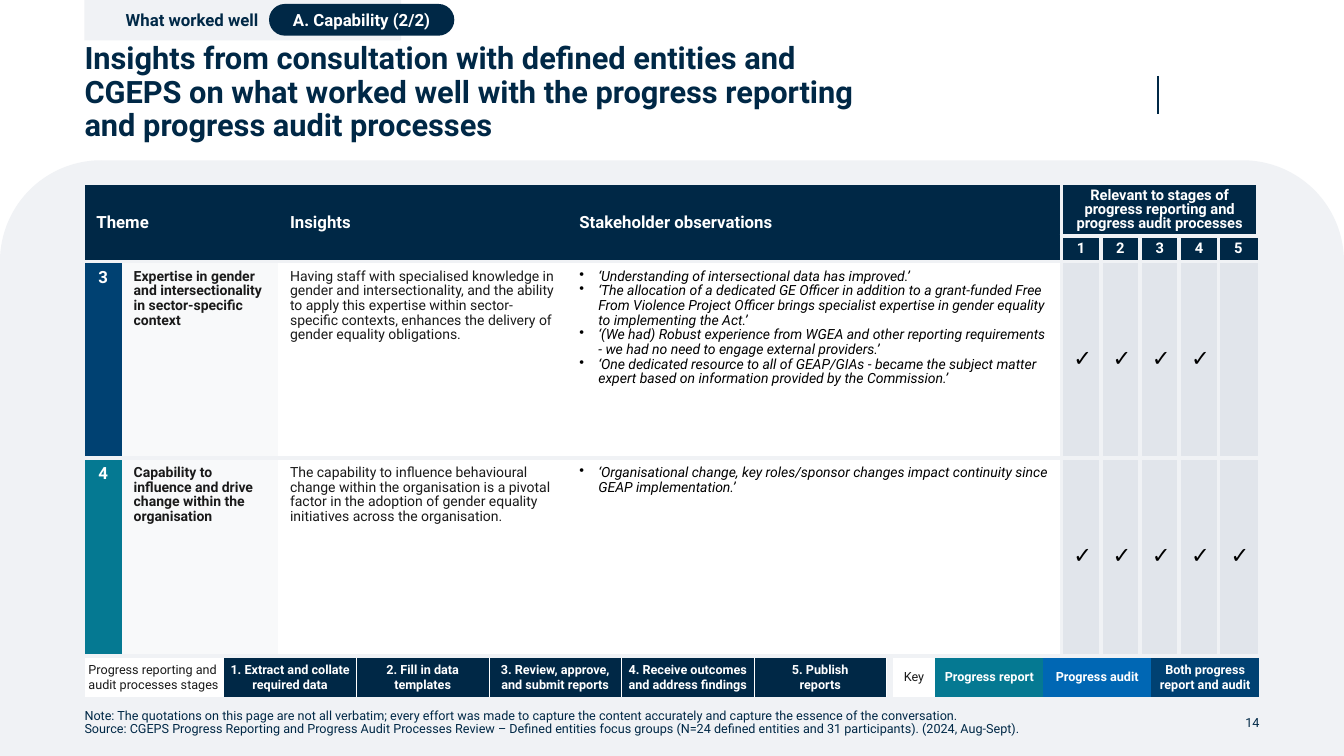
import pptx
import pptx.util
import pptx.dml.color
import pptx.enum.shapes
import pptx.enum.text
import pptx.oxml.ns
from lxml import etree

Cm, Pt = pptx.util.Cm, pptx.util.Pt
RGBColor = pptx.dml.color.RGBColor
Align = pptx.enum.text.PP_ALIGN
Anchor = pptx.enum.text.MSO_ANCHOR
Shape = pptx.enum.shapes.MSO_SHAPE
qn = pptx.oxml.ns.qn

NAVY = RGBColor(0x00, 0x28, 0x46)
DEEP_BLUE = RGBColor(0x00, 0x41, 0x72)
BLUE = RGBColor(0x00, 0x67, 0xB4)
TEAL = RGBColor(0x05, 0x79, 0x92)
MIST = RGBColor(0xF0, 0xF2, 0xF5)
PALE = RGBColor(0xF8, 0xF9, 0xFA)
GREY = RGBColor(0xE1, 0xE5, 0xEB)
INK = RGBColor(0x1A, 0x1A, 0x1A)
BLACK = RGBColor(0, 0, 0)
WHITE = RGBColor(0xFF, 0xFF, 0xFF)

NO_STYLE_TABLE = "{2D5ABB26-0587-4C30-8999-92F81FD0307C}"
LEFT_EDGE = 2.13
TIGHT = (0.1, 0.1)
HEADER_INSET = (0.3, 0.1)
BODY_INSET = (0.3, 0.2)

STAGE_COUNT = 5
HEADINGS = [(0, 1, "Theme"), (2, 2, "Insights"), (3, 3, "Stakeholder observations")]
THEMES = [
    ("3", DEEP_BLUE, "Expertise in gender and intersectionality in sector-specific context",
     "Having staff with specialised knowledge in gender and intersectionality, and the ability to "
     "apply this expertise within sector-specific contexts, enhances the delivery of gender "
     "equality obligations.",
     ["‘Understanding of intersectional data has improved.’",
      "‘The allocation of a dedicated GE Officer in addition to a grant-funded Free From Violence "
      "Project Officer brings specialist expertise in gender equality to implementing the Act.’",
      "‘(We had) Robust experience from WGEA and other reporting requirements - we had no need to "
      "engage external providers.’",
      "‘One dedicated resource to all of GEAP/GIAs - became the subject matter expert based on "
      "information provided by the Commission.’"],
     4),
    ("4", TEAL, "Capability to influence and drive change within the organisation",
     "The capability to influence behavioural change within the organisation is a pivotal factor "
     "in the adoption of gender equality initiatives across the organisation.",
     ["‘Organisational change, key roles/sponsor changes impact continuity since GEAP "
      "implementation.’"],
     5),
]
STAGES = ["1. Extract and collate required data", "2. Fill in data\vtemplates",
          "3. Review, approve, and submit reports", "4. Receive outcomes and address findings",
          "5. Publish\vreports"]
KEY = [("Progress report", TEAL), ("Progress audit", BLUE),
       ("Both progress report and audit", DEEP_BLUE)]


class SlideBuilder:
    font_name = "Roboto"

    def __init__(self, presentation):
        self.slide = presentation.slides.add_slide(presentation.slide_layouts[1])

    def add_text(self, frame, texts, color, align=Align.LEFT, spacing=0.9, bullet=None,
                 indent=0.0, **font):
        """Set one paragraph per text; \\v breaks a line."""
        frame.word_wrap = True
        for index, text in enumerate(texts):
            paragraph = frame.paragraphs[0] if index == 0 else frame.add_paragraph()
            paragraph.text = text
            properties = paragraph._p.get_or_add_pPr()
            properties.set("marL", str(Cm(indent)))
            properties.set("indent", str(-Cm(indent) if bullet else 0))
            if bullet:
                etree.SubElement(properties, qn("a:buChar"), char=bullet)
            else:
                etree.SubElement(properties, qn("a:buNone"))
            layout = {"alignment": align, "line_spacing": spacing,
                      "space_before": Pt(0), "space_after": Pt(0)}
            for name, value in layout.items():
                setattr(paragraph, name, value)
            for run in paragraph.runs:
                for name, value in {"name": self.font_name, **font}.items():
                    setattr(run.font, name, value)
                run.font.color.rgb = color

    def set_frame(self, frame):
        settings = {"margin_left": 0, "margin_right": 0, "margin_top": 0, "margin_bottom": 0,
                    "vertical_anchor": Anchor.MIDDLE,
                    "auto_size": pptx.enum.text.MSO_AUTO_SIZE.NONE}
        for name, value in settings.items():
            setattr(frame, name, value)

    def placeholder(self, index, box, text, **style):
        """Fill a placeholder, move it and bring it to the front."""
        shape = self.slide.placeholders[index]
        shape.left, shape.top, shape.width, shape.height = map(Cm, box)
        shape.element.getparent().append(shape.element)
        self.set_frame(shape.text_frame)
        self.add_text(shape.text_frame, [text], NAVY, **style)

    def text_box(self, box, text, **style):
        shape = self.slide.shapes.add_textbox(*map(Cm, box))
        self.set_frame(shape.text_frame)
        self.add_text(shape.text_frame, [text], NAVY, **style)

    def shape(self, kind, box, fill, adjustments=()):
        shape = self.slide.shapes.add_shape(kind, *map(Cm, box))
        shape.shadow.inherit = False
        shape.fill.solid()
        shape.fill.fore_color.rgb = fill
        shape.line.fill.background()
        for index, value in enumerate(adjustments):
            shape.adjustments[index] = value
        shape.text_frame.vertical_anchor = Anchor.MIDDLE
        return shape

    def line(self, start, end):
        kind = pptx.enum.shapes.MSO_CONNECTOR.STRAIGHT
        connector = self.slide.shapes.add_connector(kind, *map(Cm, start + end))
        connector.line.color.rgb = NAVY
        connector.line.width = Pt(1.5)
        etree.SubElement(connector.element.spPr, qn("a:effectLst"))

    def table(self, left, top, widths, heights):
        frame = self.slide.shapes.add_table(len(heights), len(widths), Cm(left), Cm(top),
                                            Cm(sum(widths)), Cm(sum(heights)))
        table = frame.table
        table._tbl.tblPr.find(qn("a:tableStyleId")).text = NO_STYLE_TABLE
        table.first_row = table.horz_banding = False
        for column, width in zip(table.columns, widths):
            column.width = Cm(width)
        for row, height in zip(table.rows, heights):
            row.height = Cm(height)
        return table

    def cell(self, cell, texts, fill, color, inset=TIGHT, anchor=Anchor.MIDDLE, **style):
        across, down = map(Cm, inset)
        settings = {"margin_left": across, "margin_right": across, "margin_top": down,
                    "margin_bottom": down, "vertical_anchor": anchor}
        for name, value in settings.items():
            setattr(cell, name, value)
        cell.fill.solid()
        cell.fill.fore_color.rgb = fill
        self.add_text(cell.text_frame, texts, color, **style)

    def borders(self, cell, sides, color, points):
        """Draw the given sides, a subset of LRTB in that order."""
        properties = cell._tc.get_or_add_tcPr()
        for index, side in enumerate(sides):
            line = etree.Element(qn("a:ln" + side), w=str(Pt(points)))
            fill = etree.SubElement(line, qn("a:solidFill"))
            etree.SubElement(fill, qn("a:srgbClr"), val=str(color))
            properties.insert(index, line)


def add_insights(builder):
    widths = [0.94, 3.94, 7.29, 12.45] + [0.99] * STAGE_COUNT
    table = builder.table(LEFT_EDGE, 4.67, widths, [1.27, 0.61, 4.95, 4.95])
    header = {"fill": NAVY, "color": WHITE, "inset": HEADER_INSET, "bold": True}
    for first, last, heading in HEADINGS:
        table.cell(0, first).merge(table.cell(1, last))
        builder.cell(table.cell(0, first), [heading], size=Pt(12), **header)
    table.cell(0, 4).merge(table.cell(0, 8))
    builder.cell(table.cell(0, 4),
                 ["Relevant to stages of progress reporting and progress audit processes"],
                 align=Align.CENTER, spacing=Pt(10), size=Pt(10.5), **header)
    for stage in range(STAGE_COUNT):
        builder.cell(table.cell(1, 4 + stage), [str(stage + 1)], align=Align.CENTER,
                     size=Pt(10.5), **header)

    body = {"inset": BODY_INSET, "anchor": Anchor.TOP}
    for row, (number, accent, theme, insight, quotes, ticks) in enumerate(THEMES, 2):
        cells = [table.cell(row, column) for column in range(len(widths))]
        builder.cell(cells[0], [number], accent, WHITE, align=Align.CENTER, size=Pt(12),
                     bold=True, **body)
        builder.cell(cells[1], [theme], PALE, INK, size=Pt(10), bold=True, **body)
        builder.cell(cells[2], [insight], WHITE, INK, size=Pt(10), **body)
        builder.cell(cells[3], quotes, WHITE, BLACK, bullet="•", indent=0.48, size=Pt(10),
                     italic=True, **body)
        for stage, cell in enumerate(cells[4:]):
            builder.cell(cell, ["✓" if stage < ticks else ""], GREY, BLACK,
                         inset=HEADER_INSET, align=Align.CENTER, size=Pt(16))

    for row in range(4):
        for column in range(len(widths)):
            cell = table.cell(row, column)
            if not cell.is_spanned:
                drawn = {"L": column >= 4, "R": 3 <= column < 8, "T": row > 0, "B": row < 3}
                builder.borders(cell, [side for side in drawn if drawn[side]], MIST, 3)


def add_legends(builder):
    label = {"color": INK, "spacing": 1.0, "size": Pt(9)}
    entry = {"color": WHITE, "spacing": 1.0, "size": Pt(9), "bold": True,
             "align": Align.CENTER}
    key = builder.table(22.5, 16.59, [1.07] + [2.72] * len(KEY), [0.97])
    builder.cell(key.cell(0, 0), ["Key"], WHITE, align=Align.CENTER, **label)
    for column, (text, fill) in enumerate(KEY, 1):
        builder.cell(key.cell(0, column), [text], fill, **entry)

    stages = builder.table(LEFT_EDGE, 16.59, [3.51] + [3.34] * STAGE_COUNT, [0.97])
    builder.cell(stages.cell(0, 0), ["Progress reporting and audit processes stages"], WHITE,
                 **label)
    for column, text in enumerate(STAGES, 1):
        builder.cell(stages.cell(0, column), [text], NAVY, **entry)
        builder.borders(stages.cell(0, column), "LR", WHITE, 0.5)


def main():
    presentation = pptx.Presentation()
    presentation.slide_width, presentation.slide_height = Cm(33.87), Cm(19.05)
    builder = SlideBuilder(presentation)
    builder.shape(Shape.ROUND_2_SAME_RECTANGLE, (0, 4.04, 33.87, 15.01), MIST, (0.17, 0))
    builder.line((29.18, 1.91), (29.18, 2.87))
    add_insights(builder)
    builder.placeholder(
        0, (LEFT_EDGE, 1.24, 20, 2.21),
        "Insights from consultation with defined entities and CGEPS on what worked well with the "
        "progress reporting and progress audit processes", size=Pt(22), bold=True)
    builder.placeholder(
        1, (LEFT_EDGE, 17.86, 27, 0.71),
        "Note: The quotations on this page are not all verbatim; every effort was made to capture "
        "the content accurately and capture the essence of the conversation.\v"
        "Source: CGEPS Progress Reporting and Progress Audit Processes Review – Defined entities "
        "focus groups (N=24 defined entities and 31 participants). (2024, Aug-Sept).", size=Pt(9))
    tab = builder.shape(Shape.RECTANGLE, (LEFT_EDGE, 0, 7.98, 1.02), MIST)
    builder.add_text(tab.text_frame, ["What worked well"], NAVY, spacing=1.0, indent=0.79,
                     size=Pt(12), bold=True)
    pill = builder.shape(Shape.ROUNDED_RECTANGLE, (6.78, 0.1, 4.67, 0.8), NAVY, (0.5,))
    builder.add_text(pill.text_frame, ["A. Capability (2/2)"], WHITE, align=Align.CENTER,
                     spacing=1.0, size=Pt(12), bold=True)
    add_legends(builder)
    builder.text_box((29.74, 17.86, 2, 0.71), "14", align=Align.RIGHT, spacing=1.0, size=Pt(9))
    presentation.save("out.pptx")


if __name__ == "__main__":
    main()
